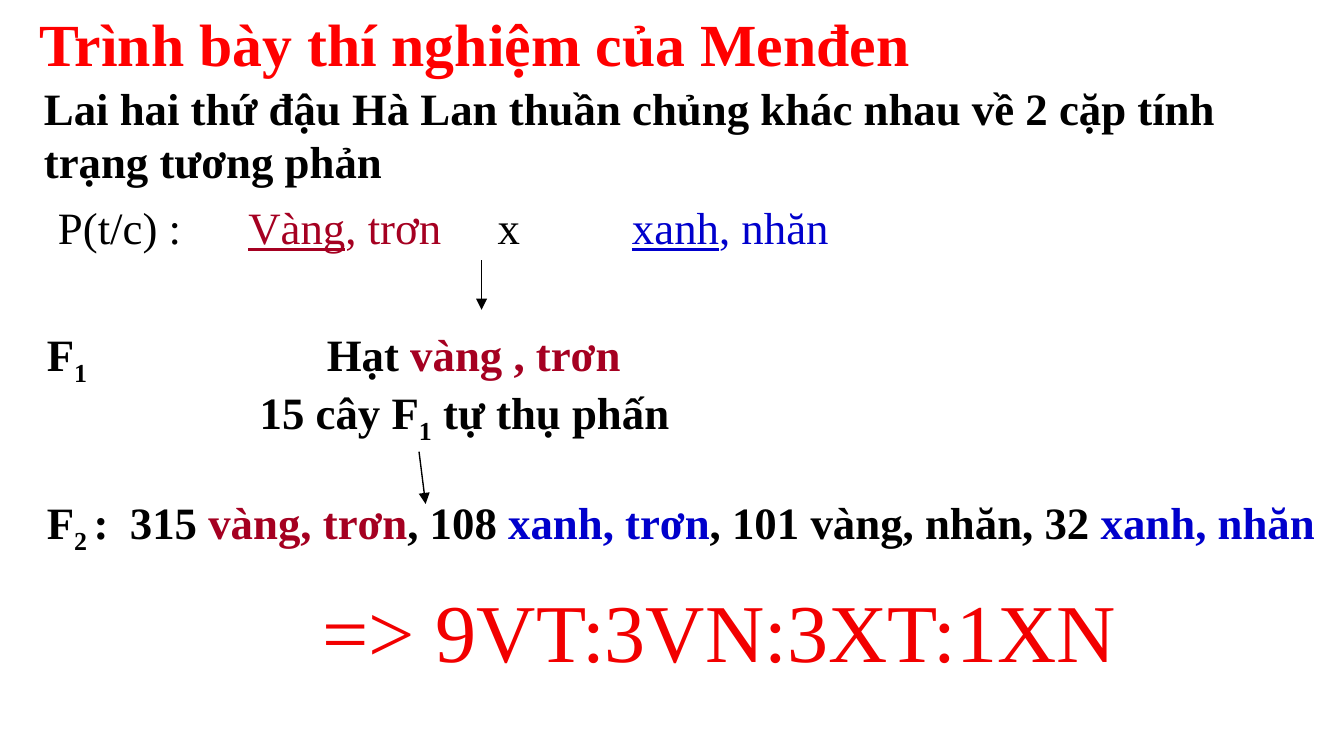
import pptx
import pptx.dml.color
import pptx.enum.dml
import pptx.enum.shapes
import pptx.enum.text
import pptx.oxml
import pptx.oxml.ns
import pptx.util

Pt = pptx.util.Pt
RGBColor = pptx.dml.color.RGBColor
PP_ALIGN = pptx.enum.text.PP_ALIGN
MSO_ANCHOR = pptx.enum.text.MSO_ANCHOR

BLACK = RGBColor(0x00, 0x00, 0x00)
MAROON = RGBColor(0xA5, 0x00, 0x21)
BLUE = RGBColor(0x00, 0x00, 0xCC)
RED = RGBColor(0xFF, 0x00, 0x00)
RATIO_RED = RGBColor(0xF2, 0x00, 0x00)

PLAIN = {"name": "Times New Roman", "size": Pt(24), "bold": False}
BOLD = {**PLAIN, "bold": True}
SUB = {"baseline": "-25000"}


def write(tf, runs, base, align=PP_ALIGN.LEFT, anchor=MSO_ANCHOR.TOP, wrap=True, tabs=()):
    """Fill a text frame with one paragraph of (text, format) runs."""
    frame = {"word_wrap": wrap, "auto_size": pptx.enum.text.MSO_AUTO_SIZE.NONE,
             "vertical_anchor": anchor}
    for key, value in frame.items():
        setattr(tf, key, value)
    p = tf.paragraphs[0]
    p.alignment = align
    if tabs:
        tab_list = pptx.oxml.ns.qn("a:tabLst")
        lst = p._p.get_or_add_pPr().makeelement(tab_list, {})
        p._p.get_or_add_pPr().append(lst)
        for pos in tabs:
            tab = lst.makeelement(pptx.oxml.ns.qn("a:tab"), {"pos": str(Pt(pos)), "algn": "l"})
            lst.append(tab)
    for text, extra in runs:
        r = p.add_run()
        r.text = text
        style = {"color": BLACK, **base, **extra}
        r.font.color.rgb = style.pop("color")
        baseline = style.pop("baseline", None)
        for key, value in style.items():
            setattr(r.font, key, value)
        if baseline:
            r._r.get_or_add_rPr().set("baseline", baseline)


def add_text(s, left, top, width, height, runs, base=BOLD, **layout):
    """Add a text box holding the given runs."""
    sp = s.shapes.add_textbox(Pt(left), Pt(top), Pt(width), Pt(height))
    write(sp.text_frame, runs, base, **layout)


def add_arrow(s, x1, y1, x2, y2):
    """Draw a thin black arrow between two points."""
    cxn = s.shapes.add_connector(pptx.enum.shapes.MSO_CONNECTOR.STRAIGHT,
                                 Pt(x1), Pt(y1), Pt(x2), Pt(y2))
    cxn.line.width = Pt(0.75)
    cxn.line.color.rgb = BLACK
    ln = cxn.line._get_or_add_ln()
    ln.append(ln.makeelement(pptx.oxml.ns.qn("a:tailEnd"), {"type": "triangle"}))
    sp_pr = cxn._element.spPr
    sp_pr.append(sp_pr.makeelement(pptx.oxml.ns.qn("a:effectLst"), {}))


def add_title(s, left, top, width, height):
    """Place the slide title in its placeholder."""
    sp = s.shapes.title
    box = {"left": left, "top": top, "width": width, "height": height}
    for key, value in box.items():
        setattr(sp, key, Pt(value))
    runs = [("Trình bày thí nghiệm của Menđen", {"color": RED, "size": Pt(32)})]
    write(sp.text_frame, runs, BOLD, align=PP_ALIGN.CENTER)


def add_statement(s, left, top, width, height):
    """Describe the experiment."""
    text = "Lai hai thứ đậu Hà Lan thuần chủng khác nhau về 2 cặp tính trạng tương phản"
    add_text(s, left, top, width, height, [(text, {})])


def add_parents(s, left, top, width, height):
    """Show the parental cross with the arrow to its offspring."""
    runs = [("P(t/c) :\t", {}),
            ("Vàng", {"color": MAROON, "underline": True}),
            (", trơn", {"color": MAROON}),
            ("\tx\t", {}),
            ("xanh", {"color": BLUE, "underline": True}),
            (", nhăn", {"color": BLUE})]
    add_text(s, left, top, width, height, runs, PLAIN, tabs=(102, 235.5, 307.5))
    add_arrow(s, left + 234, top + height, left + 234, top + height + 26.5)


def add_first_generation(s, left, top, width, height):
    """Show the F1 result and its self-pollination with an arrow."""
    row = 36
    second = top + height - row
    add_text(s, left, top, 60, row, [("F", {}), ("1", SUB)])
    add_text(s, left + 150, top, 240, row,
             [("Hạt ", {}), ("vàng , trơn", {"color": MAROON})])
    add_text(s, left + 114, second, width - 114, row,
             [("15 cây F", {}), ("1", SUB), (" tự thụ phấn", {})])
    add_arrow(s, left + 206.5, top + height + 3.5, left + 210, top + height + 31.5)


def add_second_generation(s, left, top, width, height):
    """Show the F2 counts."""
    runs = [("F", {}), ("2 ", SUB), (":\t315 ", {}),
            ("vàng, trơn", {"color": MAROON}), (", 108 ", {}),
            ("xanh, trơn", {"color": BLUE}), (", 101 vàng, nhăn, 32 ", {}),
            ("xanh, nhăn", {"color": BLUE})]
    add_text(s, left, top, width, height, runs, tabs=(44.5,))


def add_ratio(s, left, top, width, height):
    """Show the resulting ratio."""
    runs = [("=> 9VT:3VN:3XT:1XN", {"color": RATIO_RED, "size": Pt(44)})]
    add_text(s, left, top, width, height, runs, PLAIN, align=PP_ALIGN.CENTER,
             anchor=MSO_ANCHOR.MIDDLE, wrap=False)


def main():
    """Build and save the slide."""
    prs = pptx.Presentation()
    prs.slide_width, prs.slide_height = Pt(720), Pt(405)
    s = prs.slides.add_slide(prs.slide_layouts[5])
    add_title(s, 0, 0, 509, 46)
    add_statement(s, 16.5, 39.5, 642, 65.5)
    add_parents(s, 24, 103.5, 510, 36)
    add_first_generation(s, 18, 171.5, 414, 67)
    add_second_generation(s, 18, 261.5, 702, 36)
    add_ratio(s, 124, 292.5, 523.5, 90)
    prs.save("out.pptx")


if __name__ == "__main__":
    main()
